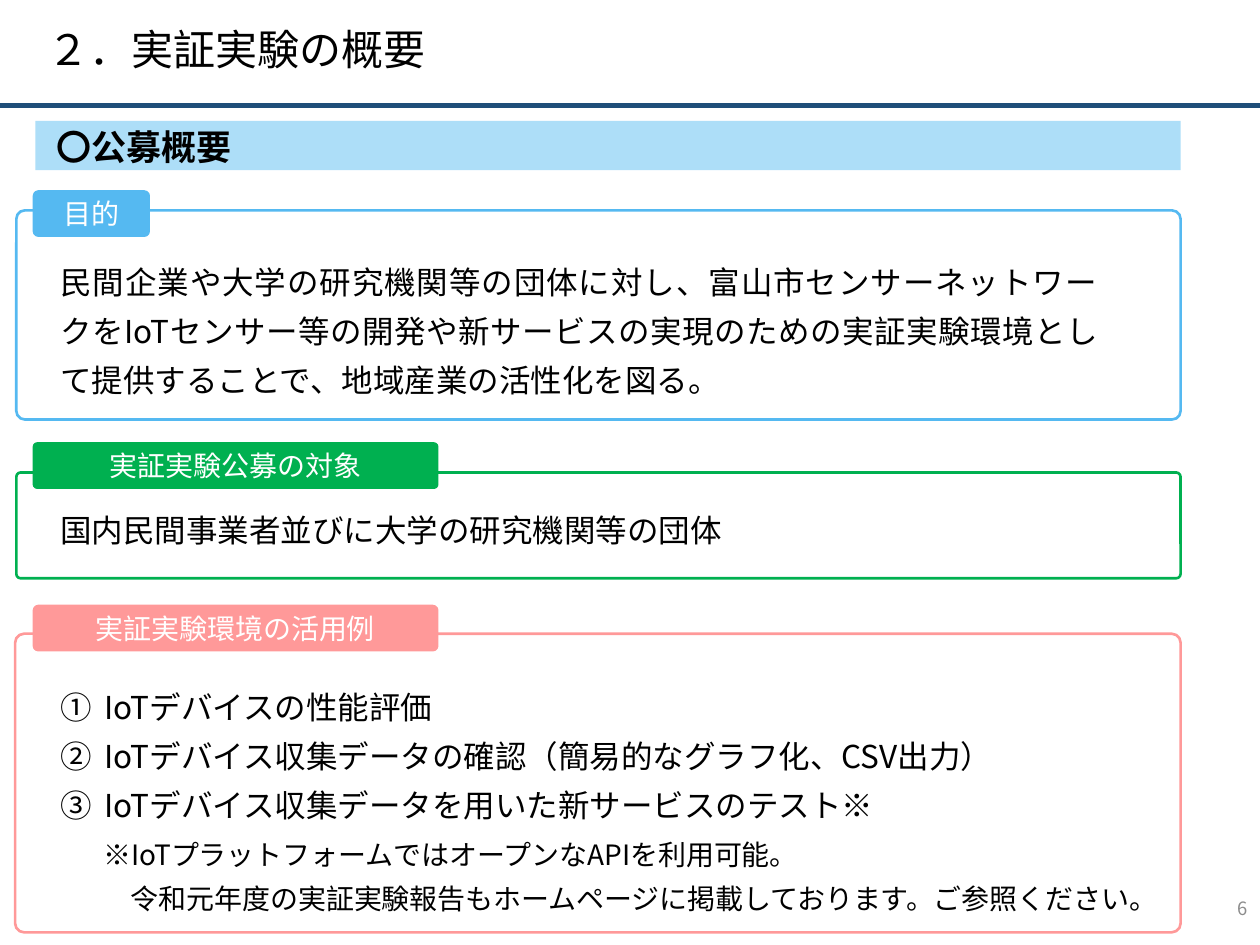
"""Build the slide on the outline of the field trial call."""
from lxml.etree import SubElement
from pptx import Presentation
from pptx.dml.color import RGBColor as RGB
from pptx.enum.shapes import MSO_CONNECTOR as Conn, MSO_SHAPE as Shape
from pptx.enum.text import MSO_ANCHOR as Anchor, PP_ALIGN as Align
from pptx.oxml.ns import qn
from pptx.util import Inches, Pt

FONT = "Noto Sans CJK JP"
HUE = dict(navy="1F4E79", pale="ADDEF8", blue="55B9F1", green="00B050",
           pink="FF9999", gray="8C8C8C", black="000000", white="FFFFFF")
RIGHT, TAB_X, TAB_H = 9.37, 0.27, 0.35

SECTIONS = [
    dict(label="目的", hue="blue", tab=(1.52, 0.91, 0.1),
         frame=(0.13, 1.67, 1.66, 0.041), box=(0.38, 1.95, 8.43, 1.23),
         lines=["民間企業や大学の研究機関等の団体に対し、富山市センサーネットワークをIoTセンサー等の開発や"
                "新サービスの実現のための実証実験環境として提供することで、地域産業の活性化を図る。"],
         style=dict(align=Align.JUSTIFY, gap=1.3)),
    dict(label="実証実験公募の対象", hue="green", tab=(3.52, 3.2, 0.075),
         frame=(0.13, 3.75, 0.84, 0.041), box=(0.38, 4.01, 7.98, 0.4),
         lines=["国内民間事業者並びに大学の研究機関等の団体"],
         style=dict(anchor=Anchor.MIDDLE)),
    dict(label="実証実験環境の活用例", hue="pink", tab=(4.81, 3.2, 0.1),
         frame=(0.12, 5.03, 2.37, 0.03), box=(0.38, 5.32, 9.36, 1.6),
         lines=["IoTデバイスの性能評価",
                "IoTデバイス収集データの確認（簡易的なグラフ化、CSV出力）",
                "IoTデバイス収集データを用いた新サービスのテスト※"],
         style=dict(align=Align.JUSTIFY, gap=1.3, count=True)),
]
NOTES = [("※IoTプラットフォームではオープンなAPIを利用可能。", 0.23),
         ("令和元年度の実証実験報告もホームページに掲載しております。ご参照ください。", 0.45)]


def color(name):
    return RGB.from_string(HUE[name])


def write(frame, lines, size=18, hue="black", align=Align.LEFT, gap=None,
          anchor=Anchor.TOP, bold=False, count=False, dents=()):
    frame.word_wrap = True
    frame.vertical_anchor = anchor
    frame.text = "\n".join(lines)
    for i, para in enumerate(frame.paragraphs):
        para.alignment = align
        if gap:
            para.line_spacing = gap
        props = para._p.get_or_add_pPr()
        if count:
            props.set("marL", str(Inches(0.35)))
            props.set("indent", str(-Inches(0.35)))
            SubElement(props, qn("a:buFont"), typeface="+mj-ea")
            SubElement(props, qn("a:buAutoNum"), type="circleNumDbPlain")
        if dents:
            props.set("marL", str(Inches(dents[i])))
        font = para.font
        font.size, font.bold, font.name = Pt(size), bold, FONT
        font.color.rgb = color(hue)
        SubElement(props.find(qn("a:defRPr")), qn("a:ea"), typeface=FONT)


def add_text(slide, box, lines, **style):
    write(slide.shapes.add_textbox(*map(Inches, box)).text_frame, lines, **style)


def add_box(slide, kind, box, fill=None, line=None, bend=None):
    shape = slide.shapes.add_shape(kind, *map(Inches, box))
    shape.shadow.inherit = False
    if fill:
        shape.fill.solid()
        shape.fill.fore_color.rgb = color(fill)
    else:
        shape.fill.background()
    if line:
        shape.line.color.rgb = color(line)
        shape.line.width = Pt(1.5)
    else:
        shape.line.fill.background()
    if bend:
        shape.adjustments[0] = bend
    return shape


def add_section(slide, label, hue, tab, frame, box, lines, style):
    left, top, high, bend = frame
    add_box(slide, Shape.ROUNDED_RECTANGLE, (left, top, RIGHT - left, high),
            line=hue, bend=bend)
    top, wide, bend = tab
    head = add_box(slide, Shape.ROUNDED_RECTANGLE, (TAB_X, top, wide, TAB_H),
                   hue, hue, bend)
    write(head.text_frame, [label], 16, "white", Align.CENTER, anchor=Anchor.MIDDLE)
    add_text(slide, box, lines, **style)


def main():
    deck = Presentation()
    deck.slide_width, deck.slide_height = Inches(10), Inches(7.5)
    slide = deck.slides.add_slide(deck.slide_layouts[6])

    rule = slide.shapes.add_connector(
        Conn.STRAIGHT, 0, Inches(0.84), deck.slide_width, Inches(0.84))
    rule.line.color.rgb = color("navy")
    rule.line.width = Pt(3)
    SubElement(rule._element.spPr, qn("a:effectLst"))

    add_text(slide, (0.28, 0.03, 9.29, 0.76), ["２．実証実験の概要"],
             size=24, gap=0.9, anchor=Anchor.MIDDLE)
    add_box(slide, Shape.RECTANGLE, (0.28, 0.96, RIGHT - 0.28, 0.39), "pale")
    add_text(slide, (0.35, 0.95, 7.18, 0.44), ["〇公募概要"], size=20, bold=True)
    for section in SECTIONS:
        add_section(slide, **section)
    lines, dents = zip(*NOTES)
    add_text(slide, (0.49, 6.52, 9.11, 0.8), lines, size=16,
             align=Align.JUSTIFY, gap=1.3, dents=dents)
    add_text(slide, (9.6, 7.01, 0.4, 0.4), ["6"], size=10.5, hue="gray",
             align=Align.RIGHT, anchor=Anchor.MIDDLE)
    deck.save("out.pptx")


if __name__ == "__main__":
    main()
